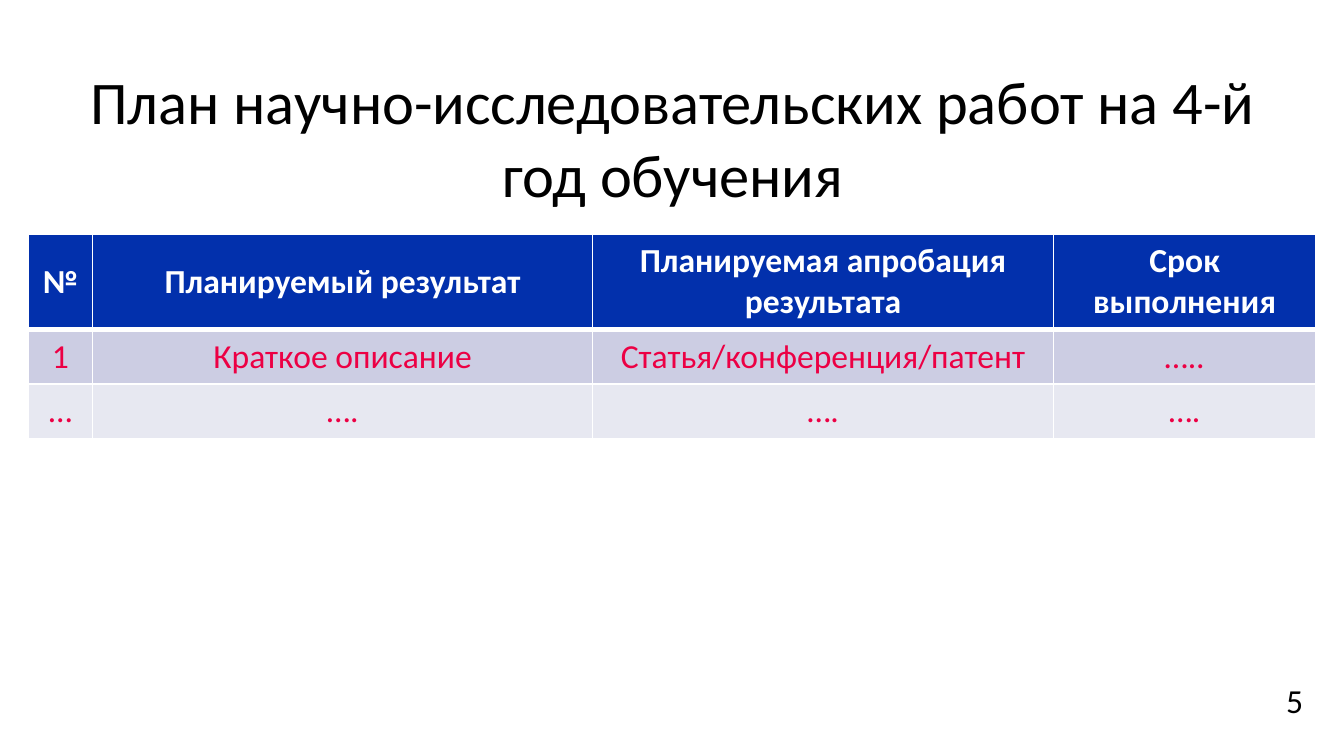
from dataclasses import dataclass

from lxml.etree import SubElement
from pptx import Presentation
from pptx.dml.color import RGBColor as RGB
from pptx.enum.text import MSO_ANCHOR as ANCHOR, MSO_AUTO_SIZE as FIT, PP_ALIGN as ALIGN
from pptx.oxml.ns import qn
from pptx.util import Inches, Pt


@dataclass(frozen=True)
class Theme:
    font: str = "Calibri"
    title_size: float = 32.4
    text_size: float = 18
    text: str = "000000"
    header_text: str = "FFFFFF"
    sample_text: str = "EC0044"
    border: str = "FFFFFF"
    row_fills: tuple = ("0230AC", "CCCDE3", "E7E8F1")


THEME = Theme()
SLIDE_WIDTH = 10
SLIDE_HEIGHT = SLIDE_WIDTH * 9 / 16
COLUMN_WIDTHS = (0.48, 3.72, 3.43, 1.95)
ROW_HEIGHTS = (0.7, 0.4, 0.4)
PLAN = (
    ("№", "Планируемый результат", "Планируемая апробация результата", "Срок выполнения"),
    ("1", "Краткое описание", "Статья/конференция/патент", "….."),
    ("…", "….", "….", "…."),
)


def write(tf, text, size, color, bold=False, align=ALIGN.CENTER):
    tf.text = text
    p = tf.paragraphs[0]
    p.alignment = align
    font = p.runs[0].font
    font.name, font.size, font.bold = THEME.font, Pt(size), bold
    font.color.rgb = RGB.from_string(color)


def set_borders(cell, top, bottom):
    """Draw all four cell borders; top and bottom are widths in points."""
    tc_pr = cell._tc.get_or_add_tcPr()
    for side, width in (("L", 1), ("R", 1), ("T", top), ("B", bottom)):
        ln = SubElement(tc_pr, qn(f"a:ln{side}"), w=str(Pt(width)))
        fill = SubElement(ln, qn("a:solidFill"))
        SubElement(fill, qn("a:srgbClr"), val=THEME.border)


def add_title(s, text):
    title = s.shapes.title
    title.left, title.top = Inches(0.24), Inches(0.35)
    title.width, title.height = Inches(9.53), Inches(1.26)
    tf = title.text_frame
    tf.auto_size = FIT.NONE
    tf.vertical_anchor = ANCHOR.BOTTOM
    write(tf, text, THEME.title_size, THEME.text)


def add_plan_table(s):
    table = s.shapes.add_table(
        len(PLAN), len(COLUMN_WIDTHS), Inches(0.21), Inches(1.74),
        Inches(sum(COLUMN_WIDTHS)), Inches(sum(ROW_HEIGHTS))).table
    for column, width in zip(table.columns, COLUMN_WIDTHS):
        column.width = Inches(width)
    for i, (row, height, texts) in enumerate(zip(table.rows, ROW_HEIGHTS, PLAN)):
        row.height = Inches(height)
        header = i == 0
        color = THEME.header_text if header else THEME.sample_text
        for cell, text in zip(row.cells, texts):
            set_borders(cell, top=3 if i == 1 else 1, bottom=3 if header else 1)
            cell.fill.solid()
            cell.fill.fore_color.rgb = RGB.from_string(THEME.row_fills[i])
            cell.vertical_anchor = ANCHOR.MIDDLE
            write(cell.text_frame, text, THEME.text_size, color, bold=header)


def add_page_number(s, number):
    box = s.shapes.add_textbox(Inches(9.47), Inches(5.01), Inches(0.29), Inches(0.4))
    write(box.text_frame, str(number), THEME.text_size, THEME.text, align=ALIGN.LEFT)
    box.text_frame.auto_size = FIT.SHAPE_TO_FIT_TEXT


def main():
    prs = Presentation()
    prs.slide_width, prs.slide_height = Inches(SLIDE_WIDTH), Inches(SLIDE_HEIGHT)
    s = prs.slides.add_slide(prs.slide_layouts[5])
    add_title(s, "План научно-исследовательских работ на 4-й год обучения")
    add_plan_table(s)
    add_page_number(s, 5)
    prs.save("out.pptx")


if __name__ == "__main__":
    main()
